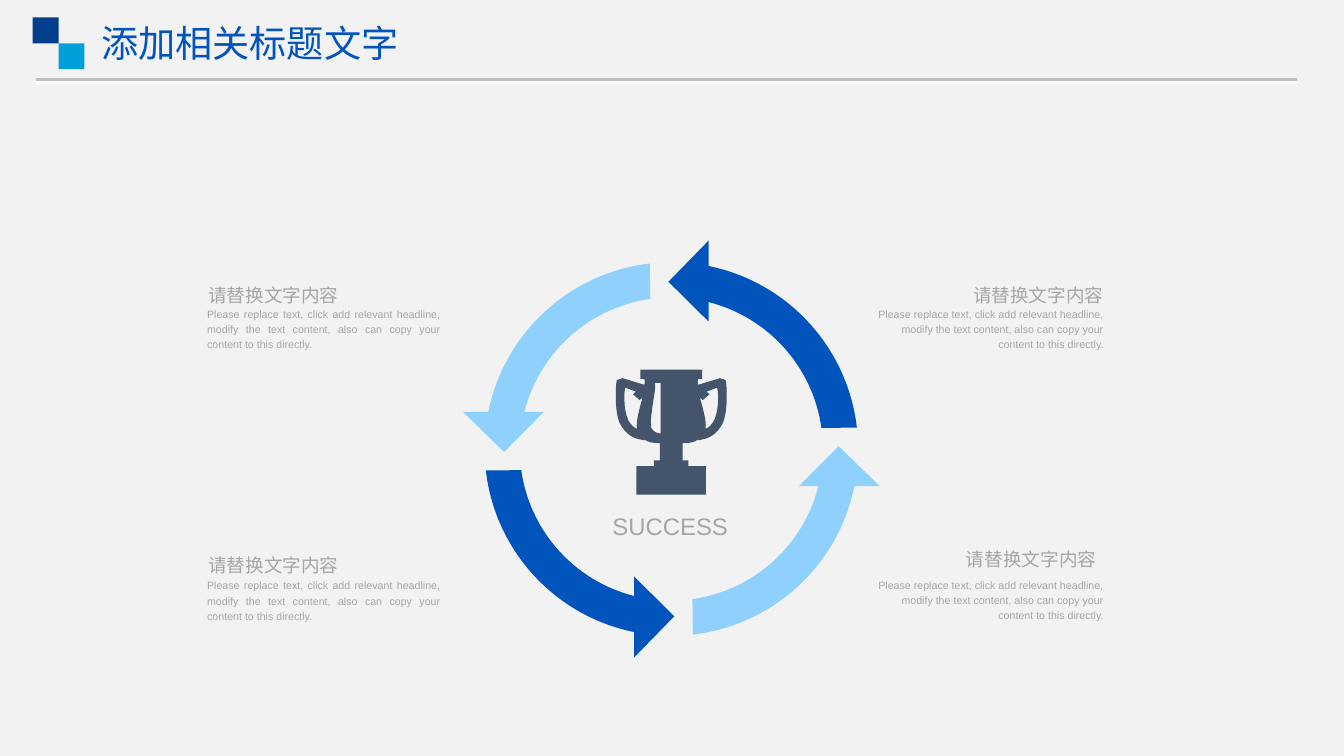
import math
from dataclasses import dataclass

import lxml.etree
import pptx
import pptx.dml.color
import pptx.enum.shapes
import pptx.enum.text
import pptx.oxml.ns
import pptx.util

Point = tuple[float, float]
Segment = tuple[Point, ...]  # one point is a line end; three are two controls and a curve end
Contour = list[Segment]
Align = pptx.enum.text.PP_ALIGN
qn = pptx.oxml.ns.qn


@dataclass(frozen=True)
class Theme:
    background: str = "F2F2F2"
    rule: str = "BFBFBF"
    rule_shadow: str = "FFFFFF"
    navy: str = "013F8D"
    cyan: str = "00A1DA"
    blue: str = "0154BC"
    light_blue: str = "90D0FD"
    slate: str = "44546A"
    grey: str = "A6A6A6"
    font: str = "Arial"
    title_font: str = "Noto Sans CJK SC"
    title_size: float = 28
    success_size: float = 18
    heading_size: float = 14
    body_size: float = 8


@dataclass(frozen=True)
class Label:
    text: str
    left: float
    top: float
    width: float
    height: float
    size: float
    align: Align = Align.LEFT
    wrap: bool = False
    line_spacing: float = 1.2
    font: str = Theme.font
    color: str = Theme.grey


@dataclass(frozen=True)
class Caption:
    heading_left: float
    heading_top: float
    body_left: float
    body_top: float
    body_width: float
    heading_align: Align
    body_align: Align


THEME = Theme()
SLIDE_WIDTH, SLIDE_HEIGHT = 1012.5, 569.5
HEADING = "请替换文字内容"
BODY = ("Please replace text, click add relevant headline, modify the text content, "
        "also can copy your content to this directly.")
CAPTIONS = [
    Caption(149.8, 207, 149, 226.5, 190.1, Align.LEFT, Align.JUSTIFY),
    Caption(149.8, 410.4, 149, 430.9, 190.1, Align.LEFT, Align.JUSTIFY),
    Caption(719.3, 406.1, 653.8, 430.6, 184.8, Align.RIGHT, Align.RIGHT),
    Caption(724.6, 207, 653.8, 226.5, 184.8, Align.RIGHT, Align.RIGHT),
]

CYCLE_CENTER: Point = (505.8, 338.3)
OUTER_RADIUS, INNER_RADIUS = 140.7, 114.2
OUTER_TAIL_ANGLE, INNER_TAIL_ANGLE = math.radians(6.6), math.radians(8)
HEAD_X = 28.0
ARROW_HEAD: Contour = [((HEAD_X, -157),), ((-2.2, -126),), ((HEAD_X, -96.1),)]

# Trophy points are measured from the middle of its top edge.
TROPHY_TOP: Point = (505.7, 278.4)
TROPHY_LEFT: Contour = [
    ((-23.3, 0),), ((-23.3, 7.2),), ((-20.2, 7.2),),
    ((-20.2, 7.9), (-19.4, 10.1), (-20.2, 11.5)),
    ((-36.7, 6.5),), ((-41, 7.9),),
    ((-41.8, 11.5), (-41.8, 16.6), (-41.8, 20.9)),
    ((-41.8, 27.4), (-41, 35.3), (-38.9, 40.3)),
    ((-35.3, 46.8), (-31, 51.1), (-23.8, 52.6)),
    ((-22.3, 53.3), (-21.6, 53.3), (-20.2, 53.3)),
    ((-20.2, 52.6),),
    ((-18, 54.7), (-14.4, 55.4), (-8.6, 55.4)),
    ((-8.6, 68.4),), ((-13, 68.4),), ((-13, 72.7),), ((-26.2, 72.7),), ((-26.2, 94.3),),
]
HANDLE_HOLE: Contour = [
    ((-21.6, 20.9),),
    ((-23.8, 29.5), (-26.6, 38.2), (-25.9, 44.6)),
    ((-28.1, 43.9), (-30.2, 41.8), (-32.4, 38.2)),
    ((-34.6, 33.1), (-35.3, 27.4), (-35.3, 20.9)),
    ((-35.3, 18.7), (-35.3, 15.8), (-34.6, 13.7)),
    ((-26.6, 16.6),), ((-28.8, 18.7),), ((-23.8, 23),),
]
HIGHLIGHT: Contour = [
    ((-7.9, 10.1),), ((-7.9, 48.2),),
    ((-7.9, 48.2), (-13, 48.2), (-15.1, 43.9)),
    ((-16.6, 39.6), (-12.2, 16.6), (-12.2, 14.4)),
    ((-12.2, 10.1),),
]


def rgb(color: str) -> pptx.dml.color.RGBColor:
    return pptx.dml.color.RGBColor.from_string(color)


def paint(shape, color: str) -> None:
    shape.fill.solid()
    shape.fill.fore_color.rgb = rgb(color)
    shape.line.fill.background()
    shape.shadow.inherit = False


def add_rectangle(slide, left: float, top: float, width: float, height: float,
                  color: str) -> None:
    paint(slide.shapes.add_shape(pptx.enum.shapes.MSO_SHAPE.RECTANGLE,
                                 *map(pptx.util.Pt, (left, top, width, height))), color)


def add_label(slide, label: Label):
    box = slide.shapes.add_textbox(*map(
        pptx.util.Pt, (label.left, label.top, label.width, label.height)))
    frame = box.text_frame
    frame.text = label.text
    frame.word_wrap = label.wrap
    paragraph = frame.paragraphs[0]
    paragraph.alignment = label.align
    paragraph.line_spacing = label.line_spacing
    font = paragraph.runs[0].font
    font.name, font.size = label.font, pptx.util.Pt(label.size)
    font.color.rgb = rgb(label.color)
    lxml.etree.SubElement(font._element, qn("a:ea")).set("typeface", label.font)
    return box


def add_outline(slide, contours: list[Contour], origin: Point, color: str) -> None:
    """Draw closed contours as one shape, with inner contours as holes and real curves."""
    placed = [[[(pptx.util.Pt(origin[0] + x), pptx.util.Pt(origin[1] + y)) for x, y in segment]
               for segment in contour] for contour in contours]
    builder = slide.shapes.build_freeform(*placed[0][0][-1])
    for index, contour in enumerate(placed):
        if index:
            builder.move_to(*contour[0][-1])
        builder.add_line_segments([segment[-1] for segment in contour[1:]], close=True)
    shape = builder.convert_to_shape()
    paint(shape, color)
    lines = shape._element.iter(qn("a:lnTo"))
    segments = [segment for contour in placed for segment in contour[1:]]
    for line, segment in zip(list(lines), segments):
        if len(segment) == 3:
            line.tag = qn("a:cubicBezTo")
            for position, (x, y) in enumerate(segment[:2]):
                control = lxml.etree.Element(qn("a:pt"), x=str(x - shape.left),
                                             y=str(y - shape.top))
                line.insert(position, control)


def arc(radius: float, start: float, end: float) -> Contour:
    """Return the start point and one cubic curve along the circle."""
    pull = 4 / 3 * math.tan((end - start) / 4)

    def on_circle(angle: float, along: float) -> Point:
        return (radius * (math.cos(angle) - along * math.sin(angle)),
                -radius * (math.sin(angle) + along * math.cos(angle)))

    return [(on_circle(start, 0),),
            (on_circle(start, pull), on_circle(end, -pull), on_circle(end, 0))]


def mirror(contour: Contour) -> Contour:
    """Flip left to right and reverse the drawing direction."""
    flipped = [[(-x, y) for x, y in segment] for segment in contour]
    result: Contour = [(flipped[-1][-1],)]
    for previous, segment in reversed(list(zip(flipped, flipped[1:]))):
        result.append((*reversed(segment[:-1]), previous[-1]))
    return result


def add_header(slide) -> None:
    rule = slide.shapes.add_connector(
        pptx.enum.shapes.MSO_CONNECTOR.STRAIGHT,
        *map(pptx.util.Pt, (27.4, 60.2, 977, 60.2)))
    rule.line.color.rgb = rgb(THEME.rule)
    rule.line.width = pptx.util.Pt(2.25)
    effects = lxml.etree.SubElement(rule._element.spPr, qn("a:effectLst"))
    shadow = lxml.etree.SubElement(effects, qn("a:outerShdw"), blurRad="0",
                                   dist=str(pptx.util.Pt(2)), dir="5400000", algn="t")
    lxml.etree.SubElement(shadow, qn("a:srgbClr"), val=THEME.rule_shadow)

    side = 19.5
    for index, color in enumerate((THEME.navy, THEME.cyan)):
        add_rectangle(slide, 24.7 + index * side, 13.2 + index * side, side, side, color)

    title = add_label(slide, Label("添加相关标题文字", 69.3, 11.5, 260.6, 41, THEME.title_size,
                                   wrap=True, line_spacing=1.0, font=THEME.title_font,
                                   color=THEME.blue))
    title.text_frame.vertical_anchor = pptx.enum.text.MSO_ANCHOR.MIDDLE


def add_cycle(slide) -> None:
    """Draw one curved arrow four times, each a quarter turn further."""
    arrow = (arc(OUTER_RADIUS, OUTER_TAIL_ANGLE, math.acos(HEAD_X / OUTER_RADIUS))
             + ARROW_HEAD
             + arc(INNER_RADIUS, math.acos(HEAD_X / INNER_RADIUS), INNER_TAIL_ANGLE))
    for color in (THEME.blue, THEME.light_blue) * 2:
        add_outline(slide, [arrow], CYCLE_CENTER, color)
        arrow = [tuple((-y, x) for x, y in segment) for segment in arrow]


def add_trophy(slide) -> None:
    contours = [TROPHY_LEFT + mirror(TROPHY_LEFT), HANDLE_HOLE, mirror(HANDLE_HOLE), HIGHLIGHT]
    add_outline(slide, contours, TROPHY_TOP, THEME.slate)
    add_label(slide, Label("SUCCESS", 454.3, 377.3, 102.2, 31, THEME.success_size, Align.JUSTIFY))


def add_caption(slide, caption: Caption) -> None:
    add_label(slide, Label(HEADING, caption.heading_left, caption.heading_top, 113.8, 25.9,
                           THEME.heading_size, caption.heading_align))
    add_label(slide, Label(BODY, caption.body_left, caption.body_top, caption.body_width, 41,
                           THEME.body_size, caption.body_align, wrap=True))


def main() -> None:
    presentation = pptx.Presentation()
    presentation.slide_width = pptx.util.Pt(SLIDE_WIDTH)
    presentation.slide_height = pptx.util.Pt(SLIDE_HEIGHT)
    slide = presentation.slides.add_slide(presentation.slide_layouts[6])
    add_rectangle(slide, 0, 0, SLIDE_WIDTH, SLIDE_HEIGHT, THEME.background)
    add_header(slide)
    add_cycle(slide)
    add_trophy(slide)
    for caption in CAPTIONS:
        add_caption(slide, caption)
    presentation.save("out.pptx")


if __name__ == "__main__":
    main()
